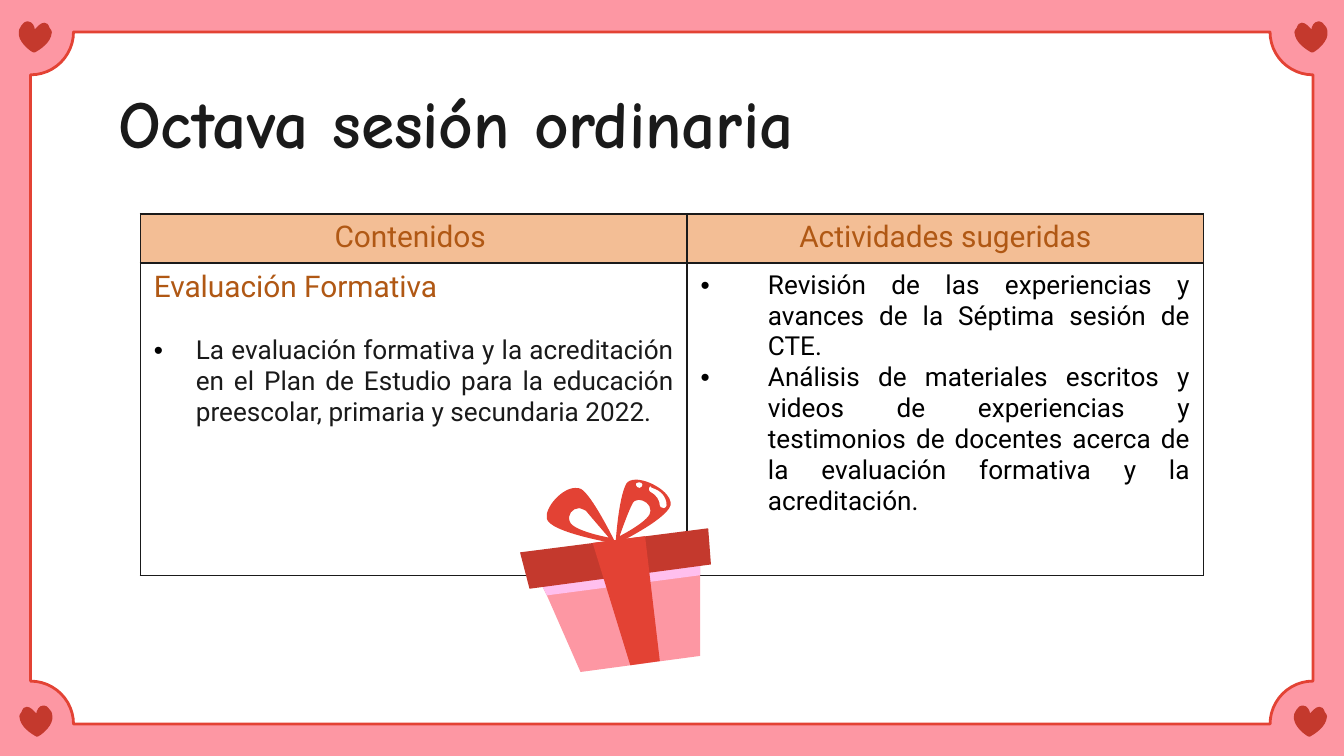
from dataclasses import dataclass
from lxml.etree import SubElement
from pptx import Presentation
from pptx.dml.color import RGBColor
from pptx.enum.shapes import MSO_SHAPE as Shape
from pptx.enum.text import MSO_ANCHOR as Anchor, PP_ALIGN as Align
from pptx.oxml import parse_xml
from pptx.oxml.ns import nsdecls, qn
from pptx.slide import Slide
from pptx.util import Pt

PINK = RGBColor(0xFD, 0x97, 0xA3)
LILAC = RGBColor(0xFF, 0xBF, 0xEE)
RED = RGBColor(0xE3, 0x42, 0x34)
DARK_RED = RGBColor(0xC4, 0x39, 0x2D)
PEACH = RGBColor(0xF3, 0xBE, 0x95)
BROWN = RGBColor(0xB0, 0x58, 0x14)
INK = RGBColor(0x1A, 0x1A, 0x1A)
BLACK = RGBColor(0, 0, 0)
WHITE = RGBColor(255, 255, 255)

# An outline is a start point, then lines (x, y) and Bézier curves (three points).
HEART = [
    (4.3, 0), (3.6, 0, 2.2, 0.7, 1.4, 2.2), (0, 3.6, 0, 5, 0, 7.2),
    (0.7, 12.2, 7.2, 16.6, 7.9, 16.6), (7.9, 16.6, 7.9, 16.6, 8.6, 16.6),
    (8.6, 16.6, 8.6, 16.6, 8.6, 16.6),
    (8.6, 16.6, 15.8, 13, 17.3, 7.9), (18, 6.5, 18, 5, 16.6, 3.6),
    (15.8, 1.4, 15.1, 0.7, 13.7, 0.7), (11.5, 0.7, 10.1, 2.9, 8.6, 4.3),
    (8.6, 2.9, 7.2, 0, 5, 0), (5, 0, 5, 0, 4.3, 0)]
HEART_WIDTH = 18
BOX = [(375.1, 294.5), (288, 308.9), (293, 319), (311, 360), (375.1, 351.4),
       (375.1, 308.2), (375.1, 294.5)]
LID_SHADE = [(375.1, 294.5), (288, 308.9), (293, 319), (375.1, 308.2), (375.1, 294.5)]
LID = [(379.4, 283), (278.6, 295.9), (283.7, 315.4), (380.9, 302.4), (379.4, 283)]
RIBBON = [(345.6, 287.3), (317.5, 290.9), (337.7, 356.4), (353.5, 354.2), (345.6, 287.3)]
LEFT_HOLE = [
    (310.3, 272.2), (311, 272.2, 312.5, 272.9, 313.9, 273.6),
    (317.5, 277.9, 326.2, 288, 326.2, 288),
    (326.2, 288, 306.7, 284.4, 305.3, 279.4),
    (303.8, 275.8, 306.7, 272.2, 310.3, 272.2)]
LEFT_LOOP = [
    (308.2, 261.4), (301, 261.4, 291.6, 272.2, 293, 277.9),
    (294.5, 285.1, 328.3, 290.9, 328.3, 290.9), (329.8, 290.9),
    (329.8, 290.9, 319, 268.6, 312.5, 262.8),
    (311, 261.4, 309.6, 261.4, 308.2, 261.4)]
RIGHT_HOLE = [
    (342, 267.8), (344.9, 267.8, 348.5, 270, 348.5, 273.6),
    (349.2, 278.6, 331.9, 287.3, 331.9, 287.3),
    (331.9, 287.3, 336.2, 275, 338.4, 270.7),
    (339.1, 268.6, 340.6, 267.8, 342, 267.8)]
RIGHT_LOOP = [
    (340.6, 257), (338.4, 257, 336.2, 257.8, 335.5, 259.2),
    (331.2, 267.1, 329.8, 290.9, 329.8, 290.9), (331.2, 290.9),
    (331.2, 290.9, 360.7, 276.5, 359.3, 269.3),
    (358.6, 263.5, 347.8, 257, 340.6, 257)]
SHINE = [
    (348.5, 260.6), (347.8, 260.6, 347, 262.8, 348.5, 263.5),
    (351.4, 265, 353.5, 267.8, 353.5, 270.7),
    (353.5, 271.4, 354.2, 272.2, 355.7, 272.2),
    (356.4, 272.2, 357.1, 271.4, 357.1, 270.7),
    (357.1, 266.4, 354.2, 262.8, 349.2, 261.4),
    (349.2, 260.6, 349.2, 260.6, 348.5, 260.6)]
DOT = [
    (342.7, 258.5), (342, 258.5, 342, 258.5, 342, 258.5),
    (339.8, 258.5, 340.6, 261.4, 342.7, 261.4),
    (342.7, 261.4, 342.7, 261.4, 342.7, 261.4),
    (344.9, 260.6, 344.2, 258.5, 342.7, 258.5)]
GIFT = [
    (PINK, [BOX]), (LILAC, [LID_SHADE]), (DARK_RED, [LID]), (RED, [RIBBON]),
    (RED, [LEFT_HOLE, LEFT_LOOP]), (RED, [RIGHT_HOLE, RIGHT_LOOP]),
    (WHITE, [SHINE]), (WHITE, [DOT])]


def bend(shape, outlines):
    """Turn the straight segments that stand for curves into Bézier segments."""
    segments = list(shape._element.iter(qn("a:lnTo")))
    parts = [part for outline in outlines for part in outline[1:]]
    for segment, part in zip(segments, parts):
        if len(part) == 2:
            continue
        segment.tag = qn("a:cubicBezTo")
        for point in list(segment):
            segment.remove(point)
        for x, y in zip(part[::2], part[1::2]):
            SubElement(segment, qn("a:pt"),
                       x=str(Pt(x) - shape.left), y=str(Pt(y) - shape.top))


def write(frame, text, font="Roboto", size=14, color=BLACK, bold=False,
          align=Align.LEFT, indent=0, before=0):
    """Add a paragraph; an indent gives it a hanging bullet."""
    para = frame.paragraphs[0] if not frame.text else frame.add_paragraph()
    para.alignment = align
    if before:
        para.space_before = Pt(before)
    span = para.add_run()
    span.text = text
    span.font.name, span.font.size, span.font.bold = font, Pt(size), bold
    span.font.color.rgb = color
    if indent:
        props = para._p.get_or_add_pPr()
        props.set("marL", str(Pt(indent)))
        props.set("indent", str(-Pt(indent)))
        SubElement(SubElement(props, qn("a:buClr")), qn("a:srgbClr"), val=str(BLACK))
        SubElement(props, qn("a:buFont"), typeface="Arial")
        SubElement(props, qn("a:buChar"), char="•")


@dataclass
class Painter:
    page: Slide
    border: RGBColor = INK
    border_width: float = 1

    def paint(self, shape, fill, line=None, width=1.5):
        shape.shadow.inherit = False
        shape.fill.solid()
        shape.fill.fore_color.rgb = fill
        if line is None:
            shape.line.fill.background()
        else:
            shape.line.color.rgb, shape.line.width = line, Pt(width)

    def preset(self, kind, left, top, width, height, fill, line=None):
        shape = self.page.shapes.add_shape(
            kind, Pt(left), Pt(top), Pt(width), Pt(height))
        self.paint(shape, fill, line)
        return shape

    def freeform(self, outlines, fill, parent=None):
        builder = None
        for outline in outlines:
            start, *rest = [(Pt(part[-2]), Pt(part[-1])) for part in outline]
            if builder is None:
                builder = (parent or self.page).shapes.build_freeform(*start)
            else:
                builder.move_to(*start)
            builder.add_line_segments(rest, close=True)
        shape = builder.convert_to_shape()
        bend(shape, outlines)
        self.paint(shape, fill)

    def heart(self, left, top, mirrored):
        def place(part):
            return tuple(top + value if index % 2 else
                         left + (HEART_WIDTH - value if mirrored else value)
                         for index, value in enumerate(part))
        self.freeform([[place(part) for part in HEART]], DARK_RED)

    def text_box(self, text, left, top, width, height, **style):
        frame = self.page.shapes.add_textbox(
            Pt(left), Pt(top), Pt(width), Pt(height)).text_frame
        frame.word_wrap = True
        frame.vertical_anchor = Anchor.TOP
        frame.margin_left = frame.margin_right = Pt(7.2)
        frame.margin_top = frame.margin_bottom = Pt(7.2)
        write(frame, text, **style)

    def table(self, left, top, widths, heights, rows):
        """Each cell is a list of (text, format) paragraphs; row one is the header."""
        table = self.page.shapes.add_table(
            len(rows), len(widths), Pt(left), Pt(top),
            Pt(sum(widths)), Pt(sum(heights))).table
        table.first_row = table.horz_banding = False
        for column, width in zip(table.columns, widths):
            column.width = Pt(width)
        for number, (row, height, cells) in enumerate(zip(table.rows, heights, rows)):
            row.height = Pt(height)
            for cell, paras in zip(row.cells, cells):
                self.outline_cell(cell)
                if number == 0:
                    cell.fill.solid()
                    cell.fill.fore_color.rgb = PEACH
                else:
                    cell.fill.background()
                for text, style in paras:
                    write(cell.text_frame, text, **style)

    def outline_cell(self, cell):
        props = cell._tc.get_or_add_tcPr()
        for side in ("lnL", "lnR", "lnT", "lnB"):
            props.append(parse_xml(
                f'<a:{side} {nsdecls("a")} w="{Pt(self.border_width)}"><a:solidFill>'
                f'<a:srgbClr val="{self.border}"/></a:solidFill></a:{side}>'))


def main():
    deck = Presentation()
    deck.slide_width, deck.slide_height = Pt(720), Pt(405)
    page = deck.slides.add_slide(deck.slide_layouts[6])
    page.background.fill.solid()
    page.background.fill.fore_color.rgb = PINK
    painter = Painter(page)

    frame = painter.preset(Shape.PLAQUE, 16.4, 17.1, 687, 370.8, WHITE, RED)
    frame.adjustments[0] = 0.062
    for top, left, mirrored in ((11.5, 693.2, True), (11.5, 10.1, False),
                                (378, 693.2, False), (378, 10.1, True)):
        painter.heart(left, top, mirrored)

    painter.text_box("Octava sesión ordinaria", 56.2, 36.4, 607.7, 54,
                     font="Comic Neue", size=36, color=INK, bold=True)

    heading = dict(size=16, color=BROWN)
    header = dict(heading, align=Align.CENTER)
    activity = dict(align=Align.JUSTIFY, indent=36)
    painter.table(75.2, 114.5, (293, 276.5), (25.5, 167.5), [
        [[("Contenidos ", header)], [("Actividades sugeridas", header)]],
        [[("Evaluación Formativa", dict(heading, align=Align.JUSTIFY)),
          ("La evaluación formativa y la acreditación en el Plan de Estudio para la "
           "educación preescolar, primaria y secundaria 2022.",
           dict(color=INK, align=Align.JUSTIFY, indent=22.5, before=16.4))],
         [("Revisión de las experiencias y avances de la Séptima sesión de CTE.", activity),
          ("Análisis de materiales escritos y videos de experiencias y testimonios de "
           "docentes acerca de la evaluación formativa y la acreditación.", activity)]]])

    gift = page.shapes.add_group_shape()
    for color, outlines in GIFT:
        painter.freeform(outlines, color, parent=gift)
    deck.save("out.pptx")


if __name__ == "__main__":
    main()
